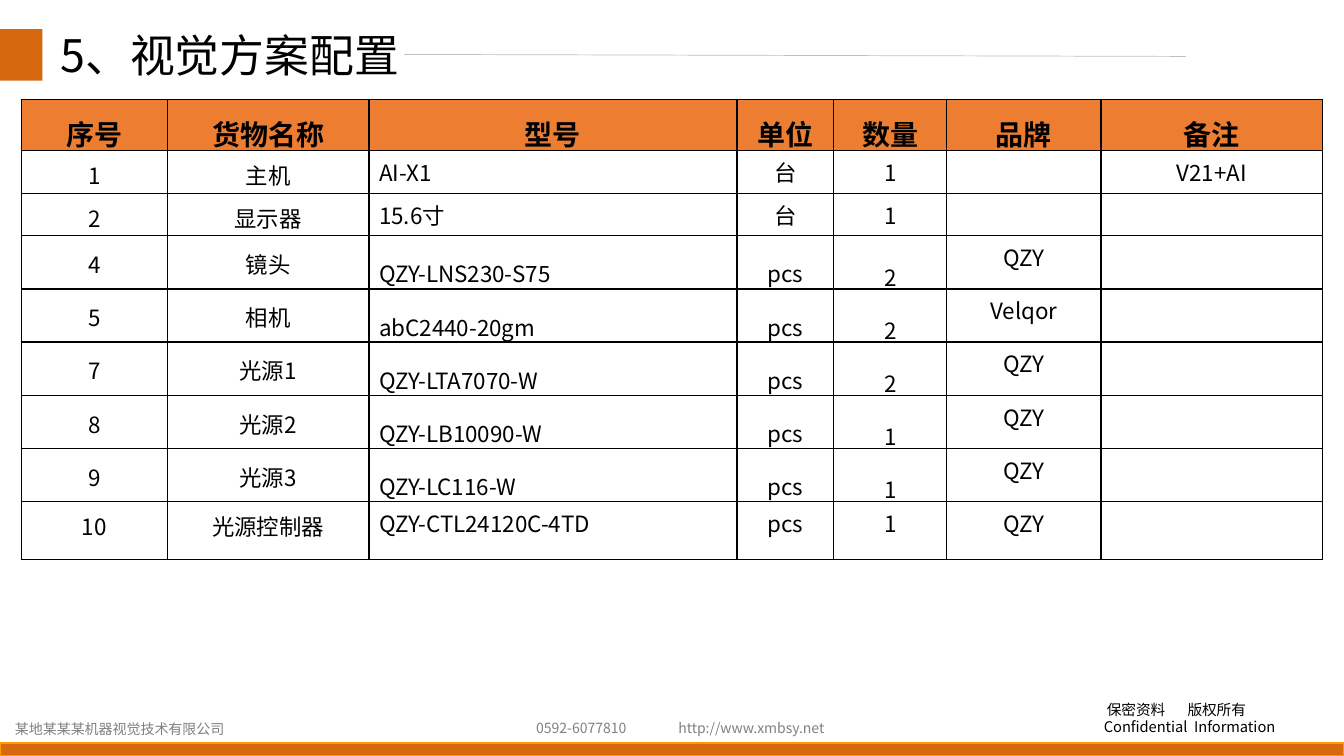
from lxml import etree
from pptx import Presentation
from pptx.dml.color import RGBColor
from pptx.enum.shapes import MSO_CONNECTOR as CONN, MSO_SHAPE as SHAPE
from pptx.enum.text import MSO_ANCHOR as ANCHOR, PP_ALIGN as ALIGN
from pptx.oxml.ns import qn
from pptx.util import Pt

PX = 9144  # EMU per px, 100 px to the inch
FONT = "Noto Sans CJK SC"
COLORS = {
    "accent": "D6680F", "edge": "FF9900", "header": "ED7D31",
    "white": "FFFFFF", "black": "000000", "grey": "808080", "rule": "BFBFBF",
}

COL_WIDTHS = [145, 200, 365, 96, 112, 153, 220]
ROW_HEIGHTS = [50, 43, 42, 46, 48, 46, 53, 46, 57]
HEADER = ["序号", "货物名称", "型号", "单位", "数量", "品牌", "备注"]
ITEMS = [
    ["1", "主机", "AI-X1", "台", "1", "", "V21+AI"],
    ["2", "显示器", "15.6寸", "台", "1", "", ""],
    ["4", "镜头", "QZY-LNS230-S75", "pcs", "2", "QZY", ""],
    ["5", "相机", "abC2440-20gm", "pcs", "2", "Velqor", ""],
    ["7", "光源1", "QZY-LTA7070-W", "pcs", "2", "QZY", ""],
    ["8", "光源2", "QZY-LB10090-W", "pcs", "1", "QZY", ""],
    ["9", "光源3", "QZY-LC116-W", "pcs", "1", "QZY", ""],
    ["10", "光源控制器", "QZY-CTL24120C-4TD", "pcs", "1", "QZY", ""],
]
# Line spacing per column for each kind of row
HEADER_SPACING = [1.2] * 7
PLAIN_SPACING = [1.1, 1.1] + [None] * 5
TALL_SPACING = [1.1, 1.1, 1.5, 1.5, 1.6, None, None]
TALL_ROWS = range(3, 8)
MODEL_COL = 2


def emu(*lengths):
    return [n * PX for n in lengths]


def rgb(name):
    return RGBColor.from_string(COLORS[name])


def add_run(p, text, size, color="black", bold=False):
    r = p.add_run()
    r.text = text
    r.font.size = Pt(size)
    r.font.bold = bold
    r.font.name = FONT
    r.font.color.rgb = rgb(color)
    etree.SubElement(r.font._element, qn("a:ea"), typeface=FONT)


def add_text_box(s, box, lines, size, color="black", spacing=None):
    tf = s.shapes.add_textbox(*emu(*box)).text_frame
    tf.word_wrap = True
    for i, line in enumerate(lines):
        p = tf.add_paragraph() if i else tf.paragraphs[0]
        p.line_spacing = spacing
        add_run(p, line, size, color)
    return tf


def add_bar(s, box, edge=None):
    bar = s.shapes.add_shape(SHAPE.RECTANGLE, *emu(*box))
    bar.shadow.inherit = False
    bar.fill.solid()
    bar.fill.fore_color.rgb = rgb("accent")
    if edge:
        bar.line.color.rgb = rgb(edge)
        bar.line.width = Pt(1)
    else:
        bar.line.fill.background()


def add_title(s, x, y):
    # Accent block, rule and heading
    add_bar(s, (x, y, 42, 51))
    rule = s.shapes.add_connector(
        CONN.STRAIGHT, *emu(x + 401, y + 25, x + 1176, y + 27))
    rule.line.color.rgb = rgb("rule")
    rule.line.width = Pt(0.5)
    etree.SubElement(rule._element.spPr, qn("a:effectLst"))
    add_text_box(s, (x + 50, y, 383, 71), ["5、视觉方案配置"], 32, spacing=0.9)


def add_footer(s, x, y, w, h):
    # Bottom bar
    add_bar(s, (x, y + h - 13, w, 13), "edge")
    # Company and contact details
    for left, top, width, text in [
        (5, 20, 235, "某地某某某机器视觉技术有限公司"),
        (522, 19, 115, "0592-6077810"),
        (663, 19, 170, "http://www.xmbsy.net"),
    ]:
        add_text_box(s, (x + left, y + top, width, 27), [text], 10, "grey")
    # Confidentiality note
    tf = add_text_box(s, (x + 1085, y, 217, 45),
                      ["保密资料\t版权所有", "Confidential  Information"], 10.5)
    pPr = tf.paragraphs[0]._p.get_or_add_pPr()
    pPr.set("marL", str(3 * PX))
    tabs = etree.SubElement(pPr, qn("a:tabLst"))
    etree.SubElement(tabs, qn("a:tab"), pos=str(80 * PX), algn="l")


def add_borders(cell):
    tcPr = cell._tc.get_or_add_tcPr()
    for i, side in enumerate(("lnL", "lnR", "lnT", "lnB")):
        ln = etree.Element(qn(f"a:{side}"), w=str(Pt(1)))
        fill = etree.SubElement(ln, qn("a:solidFill"))
        etree.SubElement(fill, qn("a:srgbClr"), val=COLORS["black"])
        tcPr.insert(i, ln)


def fill_cell(cell, text, size, fill, bold, align, spacing):
    cell.fill.solid()
    cell.fill.fore_color.rgb = rgb(fill)
    add_borders(cell)
    p = cell.text_frame.paragraphs[0]
    if text:
        p.alignment = align
        p.line_spacing = spacing
        add_run(p, text, size, bold=bold)
    else:
        # Keeps an empty cell from stretching its row
        etree.SubElement(p._p, qn("a:endParaRPr"), sz=str(size * 100))


def add_config_table(s, x, y):
    rows = [HEADER] + ITEMS
    frame = s.shapes.add_table(
        len(rows), len(HEADER),
        *emu(x, y, sum(COL_WIDTHS), sum(ROW_HEIGHTS)))
    table = frame.table
    for col, width in zip(table.columns, COL_WIDTHS):
        col.width = width * PX
    for row, height in zip(table.rows, ROW_HEIGHTS):
        row.height = height * PX
    for i, texts in enumerate(rows):
        head, tall = i == 0, i in TALL_ROWS
        spacing = (HEADER_SPACING if head
                   else TALL_SPACING if tall else PLAIN_SPACING)
        for j, text in enumerate(texts):
            cell = table.cell(i, j)
            left = j == MODEL_COL and not head
            fill_cell(cell, text, 20 if head else 16,
                      "header" if head else "white", head,
                      ALIGN.LEFT if left else ALIGN.CENTER, spacing[j])
            if tall and j < MODEL_COL:
                cell.vertical_anchor = ANCHOR.MIDDLE


def main():
    prs = Presentation()
    prs.slide_width, prs.slide_height = emu(1333, 750)
    s = prs.slides.add_slide(prs.slide_layouts[6])
    add_footer(s, 0, 690, 1333, 60)
    add_title(s, 0, 29)
    add_config_table(s, 21, 99)
    prs.save("out.pptx")


if __name__ == "__main__":
    main()
